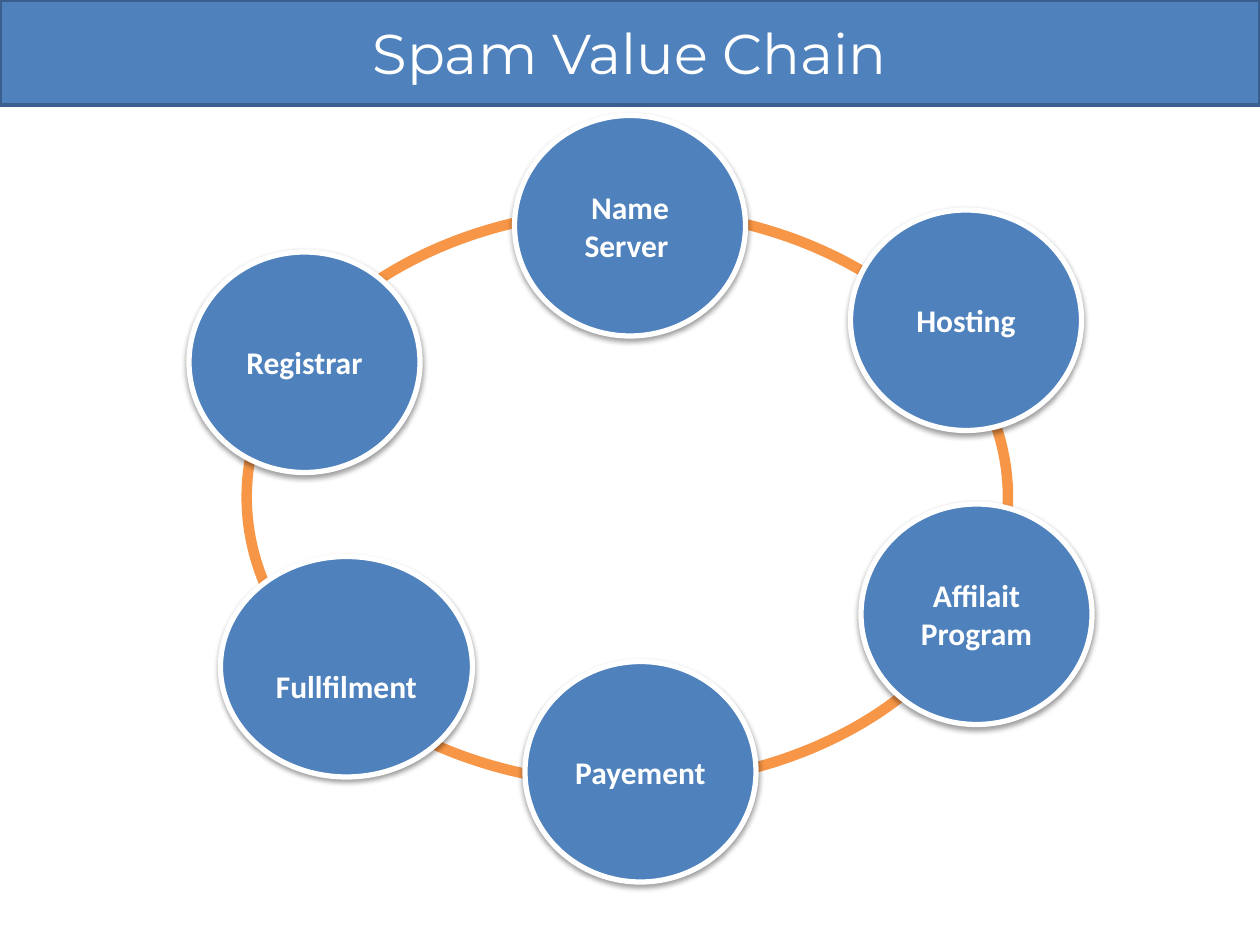
from lxml.etree import SubElement
from pptx import Presentation
from pptx.dml.color import RGBColor
from pptx.enum.shapes import MSO_SHAPE
from pptx.enum.text import MSO_ANCHOR, PP_ALIGN
from pptx.oxml.ns import qn
from pptx.util import Inches, Pt

COLORS = {"blue": "4F81BD", "edge": "3A5F8C", "ring": "F79646",
          "white": "FFFFFF", "black": "000000"}
UNIT = Inches(1) / 12
COLS, ROWS = 120, 90
NODES = [
    ("Registrar", 18, 24, 22, 0),
    ("Name Server ", 49, 11, 22, 0),
    ("Hosting", 81, 20, 22, 0),
    ("Fullfilment", 21, 53, 24, 3.6),
    ("Affilait Program", 82, 48, 22, 0),
    ("Payement", 50, 63, 22, 0),
]


def color(name):
    """Return the named colour."""
    return RGBColor.from_string(COLORS[name])


def draw(slide, kind, box, fill, edge, width):
    """Add a filled and outlined shape in a box of grid units."""
    shape = slide.shapes.add_shape(kind, *(round(n * UNIT) for n in box))
    shape.shadow.inherit = False
    shape.fill.solid()
    shape.fill.fore_color.rgb = color(fill)
    shape.line.color.rgb = color(edge)
    shape.line.width = Pt(width)
    return shape


def write(shape, text, size=18, font="Calibri", bold=False, drop=0):
    """Write centred white text, with an extra top inset in grid units."""
    frame = shape.text_frame
    frame.word_wrap = True
    frame.vertical_anchor = MSO_ANCHOR.MIDDLE
    frame.margin_top += round(drop * UNIT)
    line = frame.paragraphs[0]
    line.alignment = PP_ALIGN.CENTER
    run = line.add_run()
    run.text = text
    run.font.size = Pt(size)
    run.font.name = font
    run.font.bold = bold
    run.font.color.rgb = color("white")


def shade(shape):
    """Give a shape a soft shadow straight below it."""
    effects = shape._element.spPr.find(qn("a:effectLst"))
    outer = SubElement(effects, qn("a:outerShdw"), blurRad=str(Pt(3.1)),
                       dist=str(Pt(1.6)), dir="5400000", rotWithShape="0")
    tone = SubElement(outer, qn("a:srgbClr"), val=COLORS["black"])
    SubElement(tone, qn("a:alpha"), val="38000")


def header(slide, box):
    """Draw the title band."""
    band = draw(slide, MSO_SHAPE.RECTANGLE, box, "blue", "edge", 2)
    write(band, "Spam Value Chain", size=32, font="Montserrat")


def chain(slide, box):
    """Draw the ring and the stages placed along it."""
    left, top, wide, high = box
    ring = (left + wide * 0.2, top + high * 0.12, wide * 0.6, high * 0.68)
    ring = (left + 23.5, top + 10, wide - 47.5, high - 25.3)
    draw(slide, MSO_SHAPE.OVAL, ring, "white", "ring", 6)
    for text, col, row, span, drop in NODES:
        spot = (left + col, top + row - 10, span, 21)
        node = draw(slide, MSO_SHAPE.OVAL, spot, "blue", "white", 3)
        shade(node)
        write(node, text, bold=True, drop=drop)


def main():
    """Build and save the slide."""
    deck = Presentation()
    deck.slide_width, deck.slide_height = Inches(10), Inches(7.5)
    slide = deck.slides.add_slide(deck.slide_layouts[6])
    header(slide, (0, 0, COLS, 10))
    chain(slide, (0, 10, COLS, ROWS - 10))
    deck.save("out.pptx")


if __name__ == "__main__":
    main()
